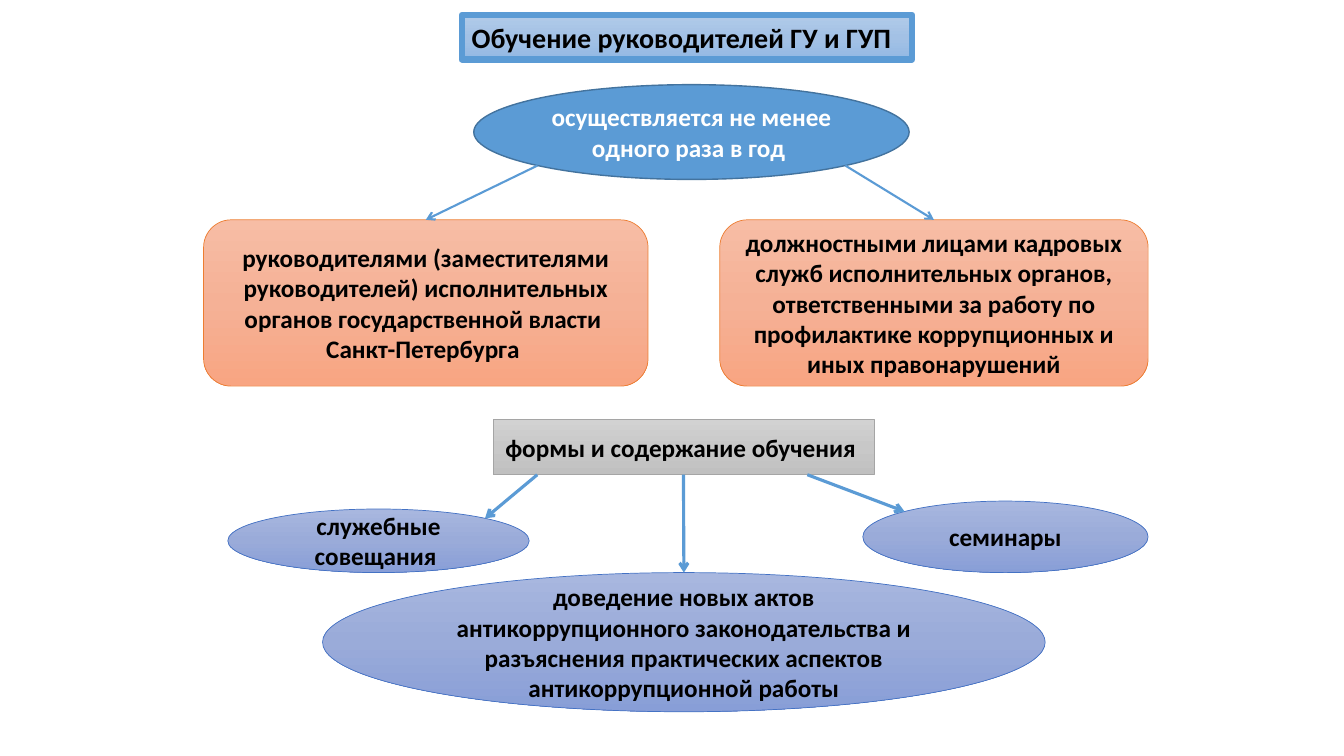
from copy import deepcopy

from pptx import Presentation
from pptx import util as u
from pptx.dml.color import RGBColor
from pptx.enum import shapes, text
from pptx.oxml.ns import qn
from lxml import etree

BLACK = RGBColor(0x00, 0x00, 0x00)
WHITE = RGBColor(0xFF, 0xFF, 0xFF)
BLUE = RGBColor(0x5B, 0x9B, 0xD5)
DARK_BLUE = RGBColor(0x43, 0x73, 0x9E)
ORANGE = RGBColor(0xED, 0x7D, 0x31)
INDIGO = RGBColor(0x44, 0x72, 0xC4)
GRAY = RGBColor(0xA5, 0xA5, 0xA5)
PALE_BLUES = [RGBColor(0xB1, 0xCB, 0xE9), RGBColor(0xA3, 0xC1, 0xE5), RGBColor(0x93, 0xB9, 0xE4)]
PALE_ORANGES = [RGBColor(0xF7, 0xBD, 0xA5), RGBColor(0xF5, 0xB1, 0x96), RGBColor(0xF8, 0xA5, 0x82)]
PALE_INDIGOS = [RGBColor(0xA8, 0xB7, 0xDF), RGBColor(0x9A, 0xAB, 0xD9), RGBColor(0x88, 0x9E, 0xD7)]
PALE_GRAYS = [RGBColor(0xD2, 0xD2, 0xD2), RGBColor(0xC8, 0xC8, 0xC8), RGBColor(0xC0, 0xC0, 0xC0)]

RECTANGLE = shapes.MSO_SHAPE.RECTANGLE
ROUNDED = shapes.MSO_SHAPE.ROUNDED_RECTANGLE
OVAL = shapes.MSO_SHAPE.OVAL
TOP, BOTTOM = 0, 2
DIAGONAL = 0.5 ** 0.5

TITLE_STYLE = {"fill": PALE_BLUES, "line": BLUE, "width": 4.5, "size": 20,
               "align": text.PP_ALIGN.LEFT, "anchor": text.MSO_ANCHOR.TOP}
PERIOD_STYLE = {"fill": [BLUE], "line": DARK_BLUE, "width": 1, "color": WHITE}
AUDIENCE_STYLE = {"fill": PALE_ORANGES, "line": ORANGE}
HEADING_STYLE = {"fill": PALE_GRAYS, "line": GRAY}
FORM_STYLE = {"fill": PALE_INDIGOS, "line": INDIGO}


def set_attributes(target, values):
    for name, value in values.items():
        setattr(target, name, value)


def paint(fill, colors):
    if len(colors) == 1:
        fill.solid()
        fill.fore_color.rgb = colors[0]
        return
    fill.gradient()
    fill.gradient_angle = 270
    stop_list = fill._xPr.find(qn("a:gradFill")).find(qn("a:gsLst"))
    stop_list.append(deepcopy(stop_list[0]))
    for index, (stop, color) in enumerate(zip(fill.gradient_stops, colors)):
        stop.color.rgb = color
        stop.position = index / (len(colors) - 1)


def add_block(slide, kind, origin, offset, size, wording, style):
    left, top = (start + shift for start, shift in zip(origin, offset))
    shape = slide.shapes.add_shape(kind, u.Pt(left), u.Pt(top), u.Pt(size[0]), u.Pt(size[1]))
    shape.shadow.inherit = False
    paint(shape.fill, style["fill"])
    shape.line.color.rgb = style["line"]
    shape.line.width = u.Pt(style.get("width", 0.5))
    frame = shape.text_frame
    set_attributes(frame, {"text": wording, "word_wrap": True,
                           "vertical_anchor": style.get("anchor", text.MSO_ANCHOR.MIDDLE)})
    for paragraph in frame.paragraphs:
        paragraph.alignment = style.get("align", text.PP_ALIGN.CENTER)
        for run in paragraph.runs:
            set_attributes(run.font, {"name": "Calibri", "size": u.Pt(style.get("size", 18)), "bold": True})
            run.font.color.rgb = style.get("color", BLACK)
    return shape


def oval_point(oval, across, down):
    return (int(oval.left + oval.width * (1 + across * DIAGONAL) / 2),
            int(oval.top + oval.height * (1 + down * DIAGONAL) / 2))


def add_arrow(slide, start, end, width):
    connector = slide.shapes.add_connector(shapes.MSO_CONNECTOR.STRAIGHT, *start, *end)
    connector.line.color.rgb = BLUE
    connector.line.width = u.Pt(width)
    properties = connector._element.spPr
    etree.SubElement(properties.find(qn("a:ln")), qn("a:tailEnd"), type="arrow")
    etree.SubElement(properties, qn("a:effectLst"))
    return connector


def draw_header(slide, origin):
    add_block(slide, RECTANGLE, origin, (0, 0), (321.8, 31.7),
              "Обучение руководителей ГУ и ГУП", TITLE_STYLE)
    return add_block(slide, OVAL, origin, (8.6, 49.7), (311, 67.7),
                     "осуществляется не менее одного раза в год ", PERIOD_STYLE)


def draw_audiences(slide, origin, period):
    audiences = [
        (0, 317.5, -1, "руководителями (заместителями руководителей) исполнительных органов "
                       "государственной власти \nСанкт-Петербурга "),
        (368.7, 306, 1, "должностными лицами кадровых служб исполнительных органов, ответственными "
                        "за работу по профилактике коррупционных и иных правонарушений"),
    ]
    for left, width, side, wording in audiences:
        audience = add_block(slide, ROUNDED, origin, (left, 0), (width, 118.8), wording, AUDIENCE_STYLE)
        start = oval_point(period, side, 1)
        arrow = add_arrow(slide, start, start, 1.5)
        arrow.end_connect(audience, TOP)


def draw_forms(slide, origin):
    content = add_block(slide, OVAL, origin, (67.7, 109.5), (516.2, 99.4),
                        "доведение новых актов антикоррупционного законодательства и разъяснения "
                        "практических аспектов антикоррупционной работы", FORM_STYLE)
    heading = add_block(slide, RECTANGLE, origin, (189.4, 0), (272.2, 39.6),
                        "формы и содержание обучения ", HEADING_STYLE)
    bottom = heading.top + heading.height
    side_forms = [
        ((0, 64.1), (215.3, 45.4), 1, 31.7, "служебные совещания "),
        ((453.6, 58.4), (203.8, 51.1), -1, 224.6, "семинары"),
    ]
    for offset, size, side, start, wording in side_forms:
        form = add_block(slide, OVAL, origin, offset, size, wording, FORM_STYLE)
        add_arrow(slide, (heading.left + u.Pt(start), bottom), oval_point(form, side, -1), 2.25)
    arrow = add_arrow(slide, (0, 0), (0, 0), 2.25)
    arrow.begin_connect(heading, BOTTOM)
    arrow.end_connect(content, TOP)


def main():
    presentation = Presentation()
    set_attributes(presentation, {"slide_width": u.Pt(960), "slide_height": u.Pt(540)})
    slide = presentation.slides.add_slide(presentation.slide_layouts[6])
    period = draw_header(slide, (329.8, 10.8))
    draw_audiences(slide, (145.4, 157), period)
    draw_forms(slide, (162.7, 299.5))
    presentation.save("out.pptx")


if __name__ == "__main__":
    main()
